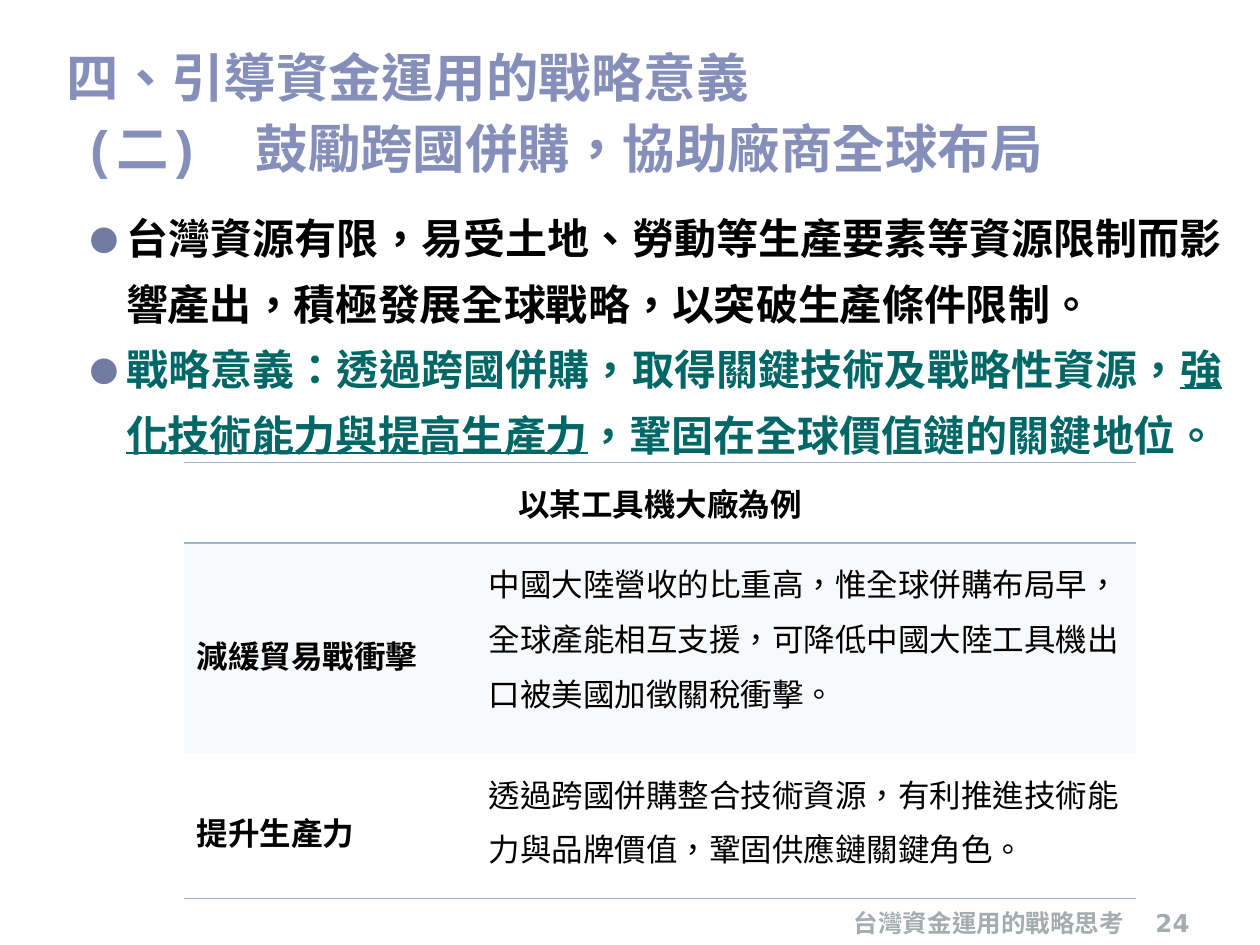
from lxml import etree
from pptx import Presentation
from pptx.dml.color import RGBColor
from pptx.enum.text import MSO_ANCHOR, PP_ALIGN
from pptx.oxml.ns import qn
from pptx.util import Inches, Pt

LEFT, CENTER, RIGHT, JUSTIFY = (PP_ALIGN.LEFT, PP_ALIGN.CENTER,
                                PP_ALIGN.RIGHT, PP_ALIGN.JUSTIFY)
TOP, MIDDLE, BOTTOM = MSO_ANCHOR.TOP, MSO_ANCHOR.MIDDLE, MSO_ANCHOR.BOTTOM
SANS, CJK, MONO = "DejaVu Sans", "Noto Sans CJK TC", "Courier New"
BLACK, TEAL, TITLE, GREY = "000000", "006666", "858FBA", "A3ACAF"
BULLET, RULE, BAND = "727CA3", "9FB8CD", "ECF1F5"
FOOTER = dict(size=Pt(14), bold=True)


def rgb(value):
    return RGBColor.from_string(value)


def child(parent, tag, **attrs):
    return etree.SubElement(parent, qn(tag), attrs)


def add_run(p, text, color=BLACK, font=SANS, **fmt):
    r = p.add_run()
    r.text = text
    r.font.name = font
    r.font.color.rgb = rgb(color)
    for key, value in fmt.items():
        setattr(r.font, key, value)
    rPr = r.font._element
    rPr.set("lang", "zh-TW")
    child(rPr, "a:ea", typeface=font)


def add_box(s, box, anchor=TOP, **margins):
    tf = s.shapes.add_textbox(*map(Inches, box)).text_frame
    tf.word_wrap = True
    tf.vertical_anchor = anchor
    for side, value in margins.items():
        setattr(tf, "margin_" + side, Inches(value))
    return tf


def add_title(s, box):
    p = add_box(s, box, BOTTOM).paragraphs[0]
    p.line_spacing = 1.12
    fmt = dict(color=TITLE, size=Pt(30), bold=True)
    add_run(p, "四、引導資金運用的戰略意義", **fmt)
    p.add_line_break()
    add_run(p, " ", **fmt)
    add_run(p, "(二)\t", font=MONO, **fmt)
    add_run(p, "鼓勵跨國併購，協助廠商全球布局", **fmt)


def add_bullets(s, box, items):
    tf = add_box(s, box, left=0.2, top=0.1, right=0.1, bottom=0.05)
    indent = Inches(0.29)
    for i, (color, runs) in enumerate(items):
        p = tf.add_paragraph() if i else tf.paragraphs[0]
        p.alignment = JUSTIFY
        p.line_spacing = 1.3
        pPr = p._p.get_or_add_pPr()
        pPr.set("marL", str(indent))
        pPr.set("indent", str(-indent))
        child(child(pPr, "a:buClr"), "a:srgbClr", val=BULLET)
        child(pPr, "a:buSzPct", val="80000")
        child(pPr, "a:buFont", typeface=SANS)
        child(pPr, "a:buChar", char="●")
        for text, fmt in runs:
            add_run(p, text, color, size=Pt(24), bold=True, **fmt)


def set_borders(cell, ruled):
    tcPr = cell._tc.get_or_add_tcPr()
    for side in "LRTB":
        ln = child(tcPr, "a:ln" + side, w=str(Pt(1)))
        if side in ruled:
            child(child(ln, "a:solidFill"), "a:srgbClr", val=RULE)
        else:
            child(ln, "a:noFill")


def fill_band(cell, alpha):
    cell.fill.solid()
    cell.fill.fore_color.rgb = rgb(BAND)
    color = cell._tc.tcPr.find(qn("a:solidFill"))[0]
    child(color, "a:alpha", val=str(alpha * 1000))


def add_case_table(s, box, cols, heights, rows):
    table = s.shapes.add_table(len(rows), len(cols), *map(Inches, box)).table
    table.first_row = table.horz_banding = False
    for col, width in zip(table.columns, cols):
        col.width = Inches(width)
    for row, height in zip(table.rows, heights):
        row.height = Inches(height)
    table.cell(0, 0).merge(table.cell(0, 1))
    for i, texts in enumerate(rows):
        for j, text in enumerate(texts):
            cell = table.cell(i, j)
            set_borders(cell, ("TB", "T", "B")[i])
            if i == 1:
                fill_band(cell, 40)
            else:
                cell.fill.background()
            if not text:
                continue
            cell.vertical_anchor = MIDDLE if i and j == 0 else TOP
            p = cell.text_frame.paragraphs[0]
            p.alignment = LEFT if i else CENTER
            p.line_spacing = 1.5
            add_run(p, text, size=Pt(18), bold=j == 0)


def add_footer(s, box, text, align):
    p = add_box(s, box, BOTTOM).paragraphs[0]
    p.alignment = align
    add_run(p, text, GREY, **FOOTER)


def main():
    prs = Presentation()
    prs.slide_width, prs.slide_height = Inches(10), Inches(7.5)
    s = prs.slides.add_slide(prs.slide_layouts[6])

    # Strategy points
    add_bullets(s, (0.51, 1.47, 9.29, 5.67), [
        (BLACK, [
            ("台灣資源有限，易受土地、勞動等生產要素等資源限制而影響產出，積極發展全球戰略", {}),
            ("，", dict(font=CJK)),
            ("以突破生產條件限制。", {})]),
        (TEAL, [
            ("戰略意義：透過跨國併購，取得關鍵技術及戰略性資源，", {}),
            ("強化技術能力與提高生產力", dict(underline=True)),
            ("，鞏固在全球價值鏈的關鍵地位。", {})]),
    ])

    # Footer and page number
    add_footer(s, (6.1, 7.09, 3.5, 0.4), "台灣資金運用的戰略思考", CENTER)
    add_footer(s, (8.94, 7.09, 0.6, 0.4), "24", RIGHT)

    # Case table
    add_case_table(s, (1.46, 3.67, 7.56, 3.46), (2.32, 5.24), (0.64, 1.67, 1.15), [
        ("以某工具機大廠為例", ""),
        ("減緩貿易戰衝擊",
         "中國大陸營收的比重高，惟全球併購布局早，全球產能相互支援，"
         "可降低中國大陸工具機出口被美國加徵關稅衝擊。"),
        ("提升生產力",
         "透過跨國併購整合技術資源，有利推進技術能力與品牌價值，鞏固供應鏈關鍵角色。"),
    ])

    # Title
    add_title(s, (0.43, 0.05, 9.37, 1.42))
    prs.save("out.pptx")


if __name__ == "__main__":
    main()
